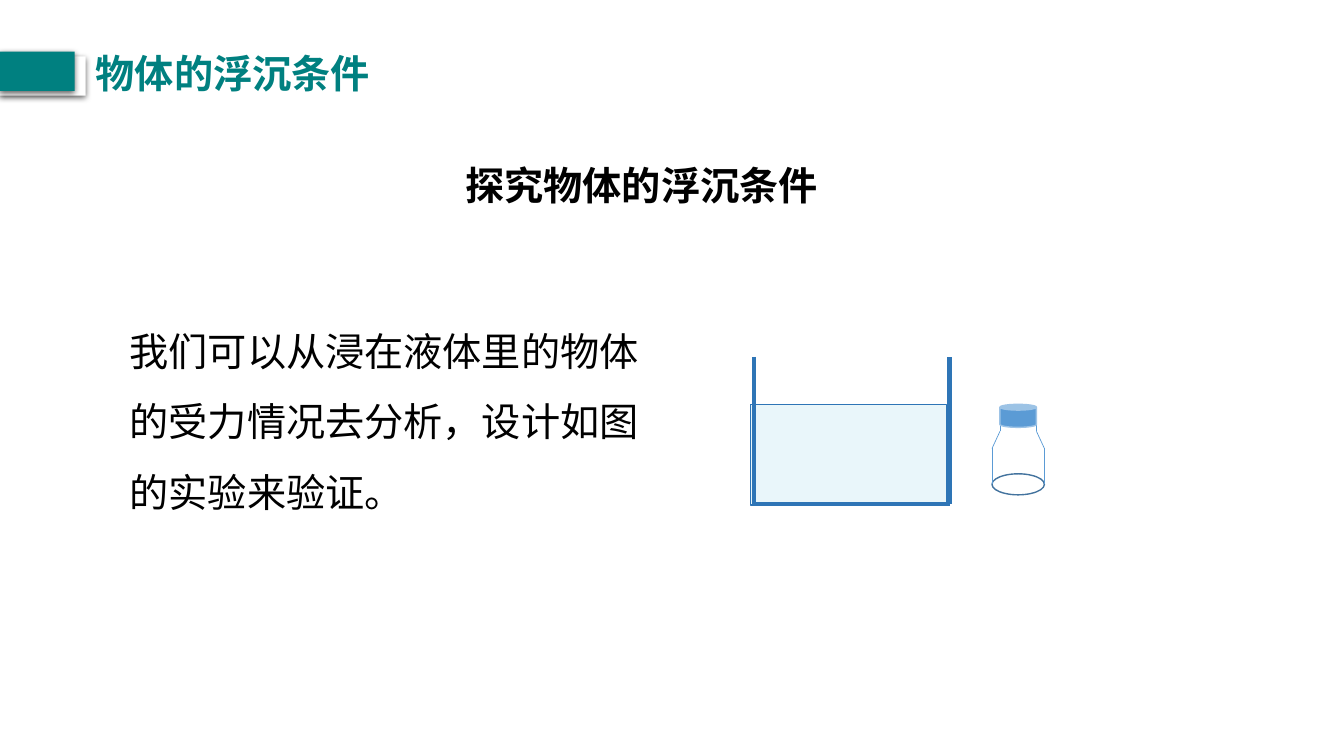
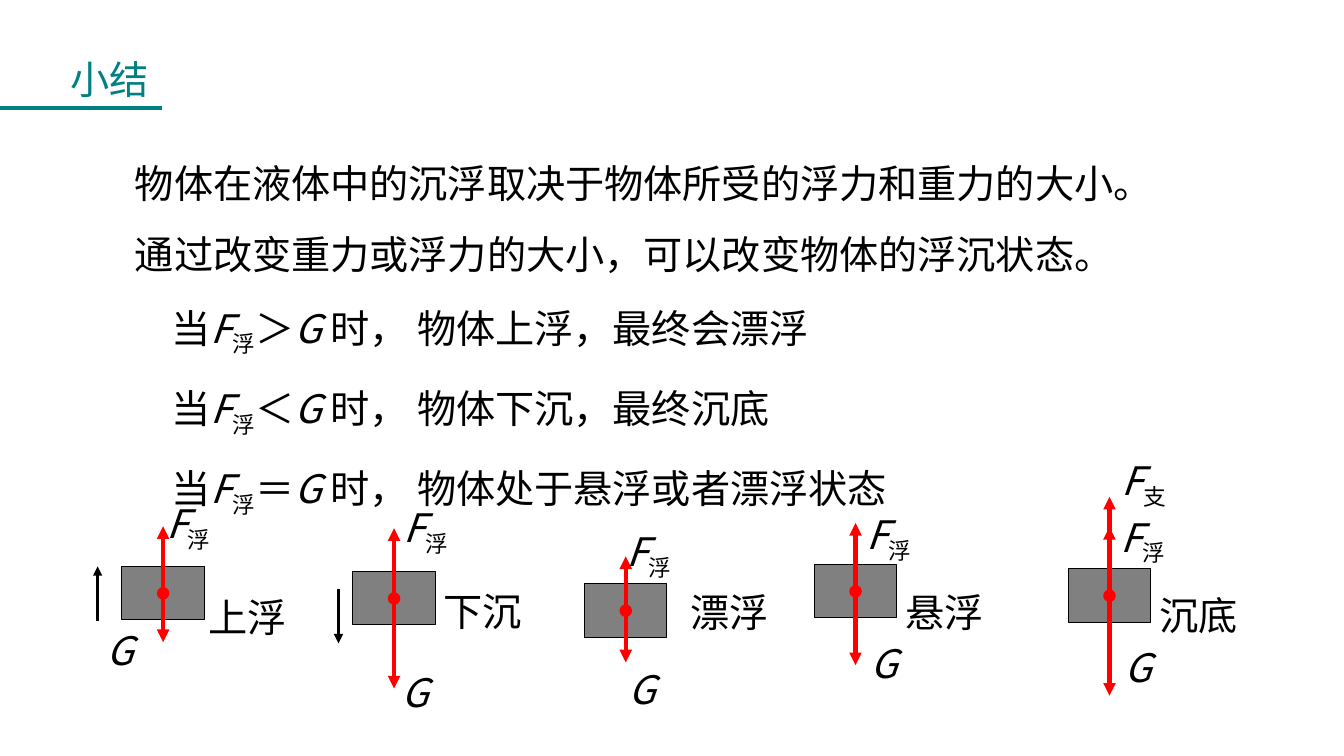
from dataclasses import dataclass
from lxml import etree
from pptx import Presentation
from pptx.dml.color import RGBColor as Rgb
from pptx.enum.shapes import MSO_CONNECTOR as Conn, MSO_SHAPE as Kind
from pptx.enum.text import MSO_ANCHOR as Anchor, MSO_AUTO_SIZE as Auto, PP_ALIGN as Align
from pptx.oxml import parse_xml
from pptx.oxml.ns import nsdecls, qn
from pptx.util import Cm, Pt


@dataclass(frozen=True)
class Theme:
    face: str = "Noto Sans CJK SC"
    size: int = 28
    ink: str = "000000"
    teal: str = "008080"
    white: str = "FFFFFF"
    water: str = "D5EEF7"
    tank: str = "2E75B6"
    glass: str = "5B9BD5"
    base: str = "43739E"
    rim: str = "9DC3E6"
    block: str = "808080"
    force: str = "FF0000"


T = Theme()

# Content: lengths in cm, boxes as left, top, width, height
TOPIC = "物体的浮沉条件"
HEAD = "探究物体的浮沉条件"
TASK = "我们可以从浸在液体里的物体的受力情况去分析，设计如图的实验来验证。"
RECAP = "小结"
FACTS = [
    "物体在液体中的沉浮取决于物体所受的浮力和重力的大小。",
    "通过改变重力或浮力的大小，可以改变物体的浮沉状态。",
]
RULES = [
    ("＞", "时， 物体上浮，最终会漂浮"),
    ("＜", "时， 物体下沉，最终沉底"),
    ("＝", "时， 物体处于悬浮或者漂浮状态"),
]
# name, its place, block corner, tips (up, down), places of F and G
CASES = [
    ("上浮", (5.26, 14.94), (3.07, 14.27), (13.26, 16.18), (3.94, 12.45), (2.44, 15.65)),
    ("下沉", (11.18, 14.81), (8.89, 14.4), (13.31, 17.35), (9.93, 12.57), (9.88, 16.71)),
    ("漂浮", (17.4, 14.83), (14.73, 14.71), (14.02, 16.69), (15.54, 13.16), (15.6, 16.64)),
    ("悬浮", (22.81, 14.83), (20.52, 14.22), (13.18, 16.76), (21.59, 12.73), (21.69, 15.98)),
    ("沉底", (29.21, 14.91), (26.92, 14.33), (13.28, 17.53), (27.99, 12.8), (28.09, 16.08)),
]
MOVES = [(2.46, 15.65, 14.27), (8.53, 14.83, 16.21)]  # x, from y, to y
PROP = (12.52, (28.02, 11.38))  # tip and label of the support force
BLOCK = (2.08, 1.35)
LABEL = (2.2, 1.45)
NAME = (2.08, 0.91)


def cm(vals):
    return [Cm(round(v, 2)) for v in vals]


def force(sub):
    return [("F", "i"), (sub, "sub")]


# Text
def put(par, runs, tint=T.ink, bold=False):
    for text, mode in runs:
        run = par.add_run()
        run.text = text
        look = {"size": Pt(T.size), "name": T.face, "bold": bold, "italic": mode == "i"}
        for key, val in look.items():
            setattr(run.font, key, val)
        run.font.color.rgb = Rgb.from_string(tint)
        props = run._r.get_or_add_rPr()
        etree.SubElement(props, qn("a:ea")).set("typeface", T.face)
        if mode == "sub":
            props.set("baseline", "-25000")


def frame(shape, wrap=True, grow=True):
    body = shape.text_frame
    look = {
        "word_wrap": wrap,
        "vertical_anchor": Anchor.TOP,
        "auto_size": Auto.SHAPE_TO_FIT_TEXT if grow else Auto.NONE,
    }
    for key, val in look.items():
        setattr(body, key, val)
    return body


def write(slide, box, pars, gap=None, bold=False, wrap=True, bare=False):
    body = frame(slide.shapes.add_textbox(*cm(box)), wrap, not bare)
    if bare:
        for side in ("left", "top", "right", "bottom"):
            setattr(body, "margin_" + side, 0)
    for num, (runs, left) in enumerate(pars):
        par = body.add_paragraph() if num else body.paragraphs[0]
        if left:
            par._p.get_or_add_pPr().set("marL", str(Cm(left)))
        if gap:
            par.line_spacing = gap
        put(par, runs, bold=bold)


def start(deck, text, box, bold):
    slide = deck.slides.add_slide(deck.slide_layouts[5])
    title = slide.shapes.title
    title.left, title.top, title.width, title.height = cm(box)
    par = frame(title).paragraphs[0]
    par.alignment = Align.LEFT
    put(par, [(text, "")], T.teal, bold)
    return slide


# Shapes
def draw(slide, kind, box, fill=None, edge=None, wide=1, alpha=None):
    shape = slide.shapes.add_shape(kind, *cm(box))
    shape.shadow.inherit = False
    if fill:
        shape.fill.solid()
        shape.fill.fore_color.rgb = Rgb.from_string(fill)
        if alpha:
            tone = shape._element.spPr.find(".//" + qn("a:srgbClr"))
            etree.SubElement(tone, qn("a:alpha")).set("val", str(alpha * 1000))
    else:
        shape.fill.background()
    if edge:
        shape.line.color.rgb = Rgb.from_string(edge)
        shape.line.width = Pt(wide)
    else:
        shape.line.fill.background()
    return shape


def shade(shape):
    props = shape._element.spPr
    props.remove(props.find(qn("a:effectLst")))
    props.append(parse_xml(
        f'<a:effectLst {nsdecls("a")}><a:outerShdw blurRad="{Pt(4.5)}" dist="{Pt(1.5)}" '
        'dir="5400000" algn="t" rotWithShape="0"><a:srgbClr val="000000">'
        '<a:alpha val="63000"/></a:srgbClr></a:outerShdw></a:effectLst>'))


def line(slide, a, b, tint, wide, head=None, tail=None):
    link = slide.shapes.add_connector(Conn.STRAIGHT, *cm((*a, *b)))
    link.line.color.rgb = Rgb.from_string(tint)
    link.line.width = Pt(wide)
    for tag, kind in (("a:headEnd", head), ("a:tailEnd", tail)):
        if kind:
            etree.SubElement(link.line._get_or_add_ln(), qn(tag)).set("type", kind)
    etree.SubElement(link._element.spPr, qn("a:effectLst"))
    return link


def trace(slide, dots, tint, wide):
    for a, b in zip(dots, dots[1:]):
        line(slide, a, b, tint, wide)


# Slides
def probe(deck):
    slide = start(deck, TOPIC, (2.16, 1.12, 9.5, 1.45), True)
    for box, fill in (((0, 1.42, 2.16, 0.99), T.white), ((0, 1.3, 1.88, 0.99), T.teal)):
        shade(draw(slide, Kind.RECTANGLE, box, fill))
    write(slide, (11.48, 3.94, 9.5, 1.45), [([(HEAD, "")], 0)], bold=True, wrap=False)
    write(slide, (3.02, 7.52, 14.25, 5.64), [([(TASK, "")], 0)], gap=1.5)

    # Tank
    draw(slide, Kind.RECTANGLE, (18.92, 10.19, 4.93, 2.54), T.water, T.tank, alpha=50)
    trace(slide, [(19, 8.99), (19, 12.7), (23.93, 12.7), (23.93, 8.99)], T.tank, 3)

    # Bottle, mirrored about its axis
    mid, neck, half = 25.66, 0.46, 0.66
    draw(slide, Kind.OVAL, (mid - half, 11.94, 2 * half, 0.53), edge=T.base)
    for side in (-1, 1):
        dots = [(neck, 10.29), (neck, 10.87), (half, 11.3), (half, 12.19)]
        trace(slide, [(mid + side * x, y) for x, y in dots], T.glass, 0.5)
    draw(slide, Kind.CAN, (mid - neck, 10.19, 2 * neck, 0.58), T.glass, T.rim)


def recap(deck):
    slide = start(deck, RECAP, (1.52, 1.27, 3.02, 1.45), False)
    line(slide, (0, 2.72), (4.09, 2.72), T.teal, 3)
    pars = [([(text, "")], 0) for text in FACTS]
    pars += [([("当", ""), *force("浮"), (sign, ""), ("G ", "i"), (end, "")], 0.93)
             for sign, end in RULES]
    write(slide, (3.15, 3.3, 27.1, 9.25), pars, gap=1.5)

    # Forces on each block
    for name, spot, (x, y), (up, down), f_at, g_at in CASES:
        block = draw(slide, Kind.RECTANGLE, (x, y, *BLOCK), T.block, T.ink, 0.75)
        mid, dot = x + BLOCK[0] / 2, y + BLOCK[1] / 2
        line(slide, (mid, dot), (mid, up), T.force, 3, tail="triangle")
        line(slide, (mid, dot), (mid, down), T.force, 3, "oval", "triangle")
        write(slide, (*spot, *NAME), [([(name, "")], 0)], bare=True)
        write(slide, (*f_at, *LABEL), [(force("浮"), 0)])
        write(slide, (*g_at, *LABEL), [([("G", "i")], 0)])

    # Support under the last block
    tip, spot = PROP
    link = line(slide, (mid, y), (mid, tip), T.force, 3, tail="triangle")
    link.begin_connect(block, 0)
    write(slide, (*spot, *LABEL), [(force("支"), 0)])

    # Directions of motion
    for x, a, b in MOVES:
        line(slide, (x, a), (x, b), T.ink, 2.25, tail="triangle")


def main():
    deck = Presentation()
    deck.slide_width, deck.slide_height = Cm(33.87), Cm(19.05)
    probe(deck)
    recap(deck)
    deck.save("out.pptx")


if __name__ == "__main__":
    main()
